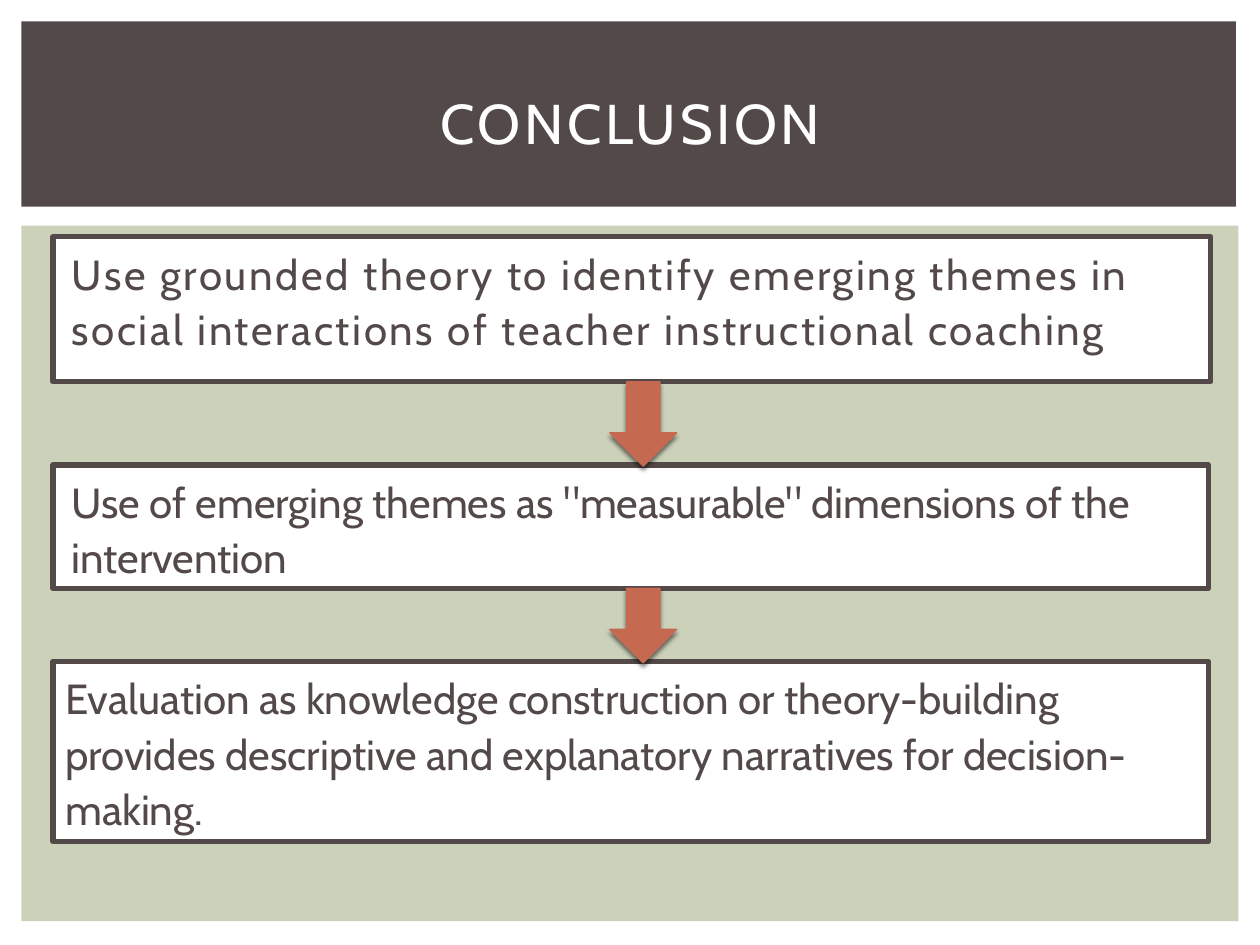
from dataclasses import dataclass

from lxml import etree
from pptx import Presentation
from pptx.dml.color import RGBColor
from pptx.enum.shapes import MSO_SHAPE
from pptx.enum.text import MSO_ANCHOR, PP_ALIGN
from pptx.oxml.ns import qn
from pptx.util import Inches, Pt

RECTANGLE = MSO_SHAPE.RECTANGLE
DOWN_ARROW = MSO_SHAPE.DOWN_ARROW
TOP, MIDDLE = MSO_ANCHOR.TOP, MSO_ANCHOR.MIDDLE
LEFT, CENTER = PP_ALIGN.LEFT, PP_ALIGN.CENTER

COLUMNS, ROWS = 100, 75
PAGE_WIDTH, PAGE_HEIGHT = Inches(10), Inches(7.5)


@dataclass(frozen=True)
class Theme:
    font: str = "Cabin"
    dark: RGBColor = RGBColor.from_string("534949")
    light: RGBColor = RGBColor.from_string("FFFFFF")
    panel: RGBColor = RGBColor.from_string("CCD1B9")
    accent: RGBColor = RGBColor.from_string("C66951")
    shadow: str = "000000"
    title_size: int = 32
    body_size: int = 24
    card_line: float = 3
    arrow_line: float = 0.79


THEME = Theme()


@dataclass(frozen=True)
class Box:
    left: float
    top: float
    width: float
    height: float

    def inner(self, left, top, width, height):
        return Box(self.left + left, self.top + top, width, height)

    def place(self):
        column, row = PAGE_WIDTH / COLUMNS, PAGE_HEIGHT / ROWS
        return (round(self.left * column), round(self.top * row),
                round(self.width * column), round(self.height * row))


@dataclass(frozen=True)
class Step:
    text: str
    top: float
    width: float
    height: float
    indent: float = 0
    tracking: float = 0


STEPS = [
    Step("Use grounded theory to identify emerging themes in social interactions "
         "of teacher instructional coaching", 0.9, 91.9, 11.5, 0.05, 1.5),
    Step('Use of emerging themes as "measurable" dimensions of the intervention',
         19, 91.7, 9.8, 0.05),
    Step("Evaluation as knowledge construction or theory-building provides "
         "descriptive and explanatory narratives for decision-making.",
         34.6, 91.7, 14.3),
]


def add_block(page, kind, box, fill, line=None, weight=0):
    block = page.shapes.add_shape(kind, *box.place())
    block.shadow.inherit = False
    block.fill.solid()
    block.fill.fore_color.rgb = fill
    if line is None:
        block.line.fill.background()
    else:
        block.line.color.rgb = line
        block.line.width = Pt(weight)
    return block


def write_text(block, text, size, color, align, anchor, tracking):
    frame = block.text_frame
    frame.word_wrap = True
    frame.vertical_anchor = anchor
    para = frame.paragraphs[0]
    para.alignment = align
    para.font.name = THEME.font
    para.font.size = Pt(size)
    para.font.color.rgb = color
    span = para.add_run()
    span.text = text
    if tracking:
        span._r.get_or_add_rPr().set("spc", str(round(tracking * 100)))
    return para


def add_shadow(block):
    effects = block._element.spPr.find(qn("a:effectLst"))
    shadow = etree.SubElement(effects, qn("a:outerShdw"), blurRad=str(Pt(2.5)),
                              dist=str(Pt(2)), dir="5400000", rotWithShape="0")
    color = etree.SubElement(shadow, qn("a:srgbClr"), val=THEME.shadow)
    etree.SubElement(color, qn("a:alpha"), val="50000")


def add_header(page, box):
    add_block(page, RECTANGLE, box, THEME.dark)
    title = page.shapes.add_textbox(*box.inner(2.5, 2.2, 91.7, 11.5).place())
    write_text(title, "CONCLUSION", THEME.title_size, THEME.light, CENTER, MIDDLE, 2)


def add_card(page, box, step):
    card = add_block(page, RECTANGLE, box, THEME.light, THEME.dark, THEME.card_line)
    para = write_text(card, step.text, THEME.body_size, THEME.dark, LEFT, TOP,
                      step.tracking)
    para.line_spacing = 1.1
    if step.indent:
        para._p.get_or_add_pPr().set("marL", str(Inches(step.indent)))


def add_arrow(page, box):
    arrow = add_block(page, DOWN_ARROW, box, THEME.accent, THEME.accent,
                      THEME.arrow_line)
    add_shadow(arrow)


def add_steps(page, box):
    add_block(page, RECTANGLE, box, THEME.panel)
    for step in STEPS:
        add_card(page, box.inner(2.5, step.top, step.width, step.height), step)
    for upper, lower in zip(STEPS, STEPS[1:]):
        start = upper.top + upper.height
        add_arrow(page, box.inner(46.7, start, 5.3, lower.top - start + 0.1))


def main():
    deck = Presentation()
    deck.slide_width, deck.slide_height = PAGE_WIDTH, PAGE_HEIGHT
    page = deck.slides.add_slide(deck.slide_layouts[6])
    add_steps(page, Box(1.7, 17.9, 96.6, 55.2))
    add_header(page, Box(1.7, 1.7, 96.4, 14.7))
    deck.save("out.pptx")


if __name__ == "__main__":
    main()
